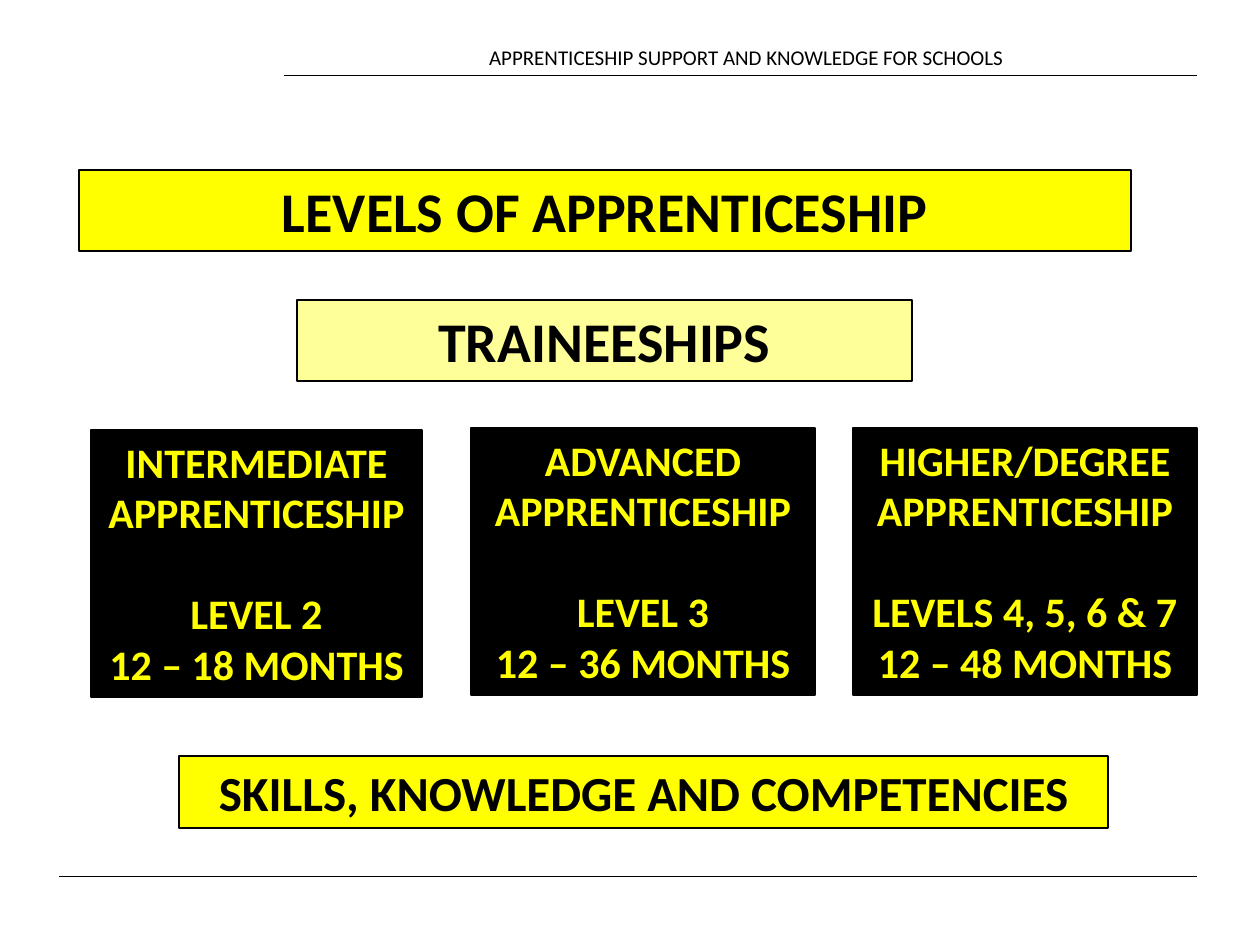
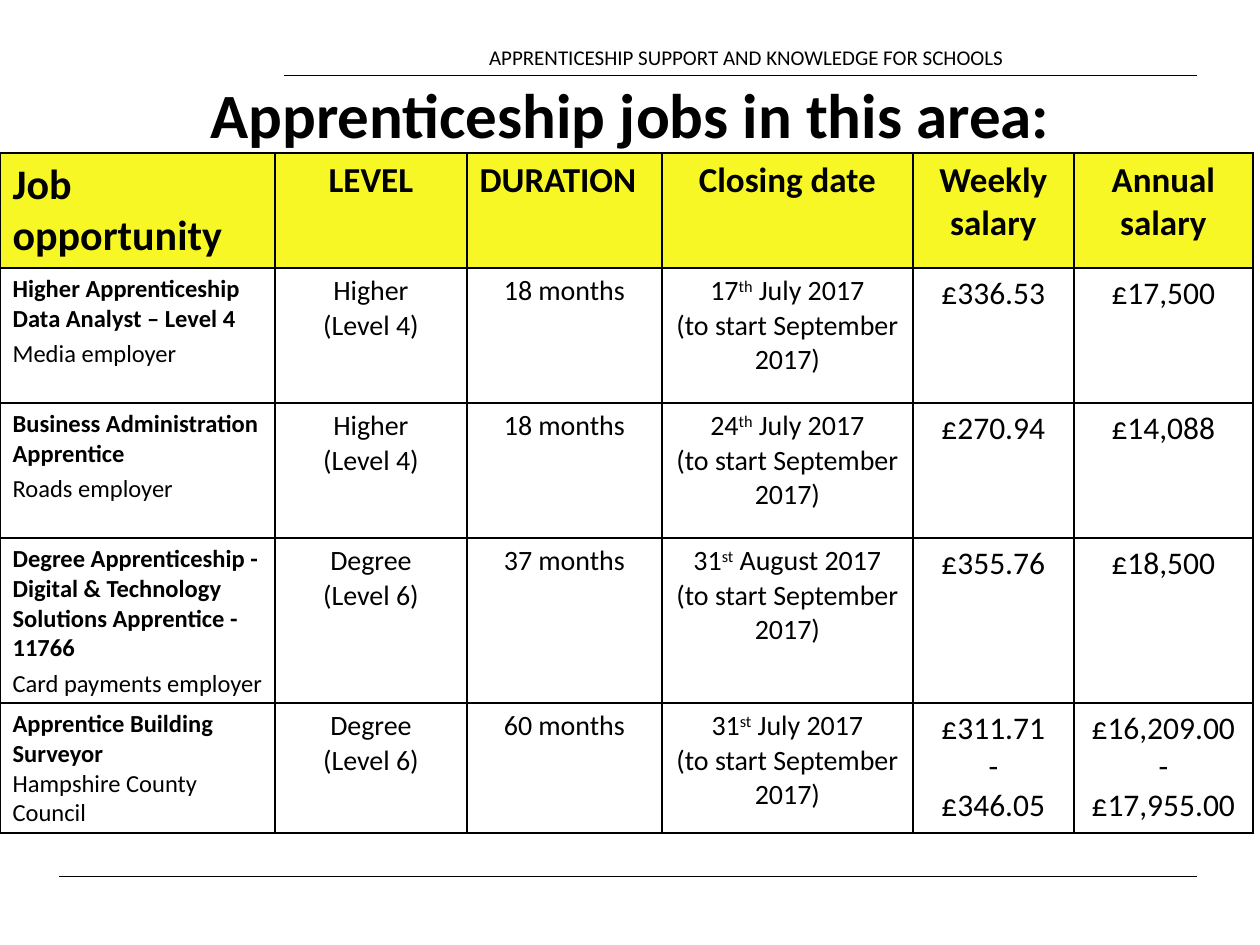
from dataclasses import dataclass

from lxml.etree import SubElement
from pptx import Presentation
from pptx.dml.color import RGBColor
from pptx.enum.shapes import MSO_CONNECTOR, MSO_SHAPE
from pptx.enum.text import MSO_ANCHOR, MSO_AUTO_SIZE, PP_ALIGN
from pptx.oxml.ns import qn
from pptx.util import Emu, Pt

EMU_PER_PX = 914400 / 126


@dataclass(frozen=True)
class Theme:
    """Colours, font and type sizes of the deck."""
    font: str = "Calibri"
    ink: str = "000000"
    yellow: str = "FFFF00"
    pale: str = "FFFF99"
    table_head: str = "F8F726"
    running: int = 12
    title: int = 36
    banner: int = 32
    summary: int = 28
    level: int = 24
    level_gap: int = 29
    first_head: int = 24
    head: int = 20
    salary: int = 18
    detail: int = 16
    job: int = 14
    job_gap: int = 3
    rule: float = 0.5
    outline: float = 0.75
    grid: int = 1


THEME = Theme()


@dataclass
class Para:
    """One paragraph; runs are strings, or (string, True) when raised."""
    runs: list
    size: int
    bold: bool = False
    color: str = THEME.ink
    align: PP_ALIGN = PP_ALIGN.CENTER
    before: int = 0


@dataclass(frozen=True)
class Job:
    """One vacancy in the jobs table."""
    role: str
    employer: str
    level: tuple
    duration: str
    day: str
    suffix: str
    month: str
    weekly: tuple
    annual: str
    employer_gap: int = THEME.job_gap


HEADINGS = ["Job opportunity", "LEVEL", "DURATION", "Closing date", "Weekly salary", "Annual salary"]
LEFT_HEADINGS = {"Job opportunity", "DURATION"}
COLUMN_WIDTHS = [275, 192, 195, 251, 161, 179]
ROW_HEIGHTS = [115, 135, 135, 165, 130]
LEVEL_4 = ("Higher", "(Level 4)")
LEVEL_6 = ("Degree", "(Level 6)")
JOBS = [
    Job("Higher Apprenticeship Data Analyst – Level 4", "Media employer", LEVEL_4,
        "18 months", "17", "th", "July", ("£336.53",), "£17,500"),
    Job("Business Administration Apprentice", "Roads employer", LEVEL_4,
        "18 months", "24", "th", "July", ("£270.94",), "£14,088"),
    Job("Degree Apprenticeship - Digital & Technology Solutions Apprentice - 11766",
        "Card payments employer", LEVEL_6,
        "37 months", "31", "st", "August", ("£355.76",), "£18,500"),
    Job("Apprentice Building Surveyor", "Hampshire County Council", LEVEL_6,
        "60 months", "31", "st", "July", ("£311.71", "-", "£346.05"),
        "£16,209.00 - £17,955.00", employer_gap=0),
]


def px(length):
    """Turn px into EMU."""
    return Emu(round(length * EMU_PER_PX))


def rgb(color):
    """Turn a hex string into a colour."""
    return RGBColor.from_string(color)


def write(frame, paras):
    """Fill a text frame with paragraphs, run by run."""
    frame.word_wrap = True
    for index, para in enumerate(paras):
        line = frame.paragraphs[0] if index == 0 else frame.add_paragraph()
        line.alignment = para.align
        if para.before:
            line.space_before = Pt(para.before)
        for part in para.runs:
            words, raised = (part, False) if isinstance(part, str) else part
            run = line.add_run()
            run.text = words
            run.font.name = THEME.font
            run.font.size = Pt(para.size)
            run.font.bold = para.bold
            run.font.color.rgb = rgb(para.color)
            if raised:
                run.font._element.set("baseline", "30000")


def place_title(slide, box, para, anchor):
    """Move the title placeholder to its box and fill it."""
    title = slide.shapes.title
    title.left, title.top, title.width, title.height = map(px, box)
    title.text_frame.auto_size = MSO_AUTO_SIZE.NONE
    title.text_frame.vertical_anchor = anchor
    write(title.text_frame, [para])
    return title


def paint(panel, fill):
    """Give a panel its fill and thin outline."""
    panel.fill.solid()
    panel.fill.fore_color.rgb = rgb(fill)
    panel.line.color.rgb = rgb(THEME.ink)
    panel.line.width = Pt(THEME.outline)


def add_panel(slide, box, fill, paras):
    """Add an outlined rectangle with text from its top."""
    panel = slide.shapes.add_shape(MSO_SHAPE.RECTANGLE, *map(px, box))
    panel.shadow.inherit = False
    paint(panel, fill)
    panel.text_frame.vertical_anchor = MSO_ANCHOR.TOP
    write(panel.text_frame, paras)


def add_rule(slide, left, right, y):
    """Add a thin horizontal rule."""
    rule = slide.shapes.add_connector(MSO_CONNECTOR.STRAIGHT, px(left), px(y), px(right), px(y))
    rule.line.color.rgb = rgb(THEME.ink)
    rule.line.width = Pt(THEME.rule)
    SubElement(rule._element.spPr, qn("a:effectLst"))


def add_frame(slide):
    """Add the running header and both rules."""
    add_rule(slide, 59, 1197, 876)
    add_rule(slide, 284, 1197, 75)
    header = slide.shapes.add_textbox(px(465), px(38), px(551), px(38))
    write(header.text_frame, [Para(["APPRENTICESHIP SUPPORT AND KNOWLEDGE FOR SCHOOLS"],
                                   THEME.running, align=PP_ALIGN.RIGHT)])


def add_level(slide, box, stage, level, months):
    """Add one apprenticeship level card."""
    rows = [(f"{stage} APPRENTICESHIP", 0), (level, THEME.level_gap), (months, 0)]
    add_panel(slide, box, THEME.ink,
              [Para([words], THEME.level, True, THEME.yellow, before=gap) for words, gap in rows])


def build_levels(slide):
    """Build the slide on apprenticeship levels."""
    add_frame(slide)
    heading = place_title(slide, (79, 170, 1052, 81),
                          Para(["LEVELS OF APPRENTICESHIP"], THEME.banner, True), MSO_ANCHOR.TOP)
    paint(heading, THEME.yellow)
    add_panel(slide, (297, 300, 615, 81), THEME.pale,
              [Para(["TRAINEESHIPS"], THEME.banner, True)])
    add_level(slide, (91, 430, 331, 267), "INTERMEDIATE", "LEVEL 2", "12 – 18 MONTHS")
    add_level(slide, (471, 428, 344, 267), "ADVANCED", "LEVEL 3", "12 – 36 MONTHS")
    add_level(slide, (853, 428, 344, 267), "HIGHER/DEGREE", "LEVELS 4, 5, 6 & 7", "12 – 48 MONTHS")
    add_panel(slide, (179, 756, 929, 72), THEME.yellow,
              [Para(["SKILLS, KNOWLEDGE AND COMPETENCIES"], THEME.summary, True)])


def outline_cell(cell):
    """Draw the four borders of a table cell."""
    properties = cell._tc.get_or_add_tcPr()
    for position, side in enumerate(("a:lnL", "a:lnR", "a:lnT", "a:lnB")):
        border = SubElement(properties, qn(side), w=str(Pt(THEME.grid)))
        fill = SubElement(border, qn("a:solidFill"))
        SubElement(fill, qn("a:srgbClr"), val=THEME.ink)
        properties.insert(position, border)


def heading_cells():
    """Return the paragraphs of the heading row."""
    return [[Para([words], THEME.head if column else THEME.first_head, True,
                  align=PP_ALIGN.LEFT if words in LEFT_HEADINGS else PP_ALIGN.CENTER)]
            for column, words in enumerate(HEADINGS)]


def job_cells(job):
    """Return the paragraphs of one job row."""
    return [
        [Para([job.role], THEME.job, True, align=PP_ALIGN.LEFT),
         Para([job.employer], THEME.job, align=PP_ALIGN.LEFT, before=job.employer_gap)],
        [Para([words], THEME.detail) for words in job.level],
        [Para([job.duration], THEME.detail)],
        [Para([job.day, (job.suffix, True), f" {job.month} 2017"], THEME.detail),
         Para(["(to start September 2017)"], THEME.detail)],
        [Para([words], THEME.salary) for words in job.weekly],
        [Para([job.annual], THEME.salary)],
    ]


def add_jobs_table(slide, left, top):
    """Add the jobs table with its top left corner at the given place."""
    rows = [heading_cells(), *map(job_cells, JOBS)]
    table = slide.shapes.add_table(len(rows), len(HEADINGS), px(left), px(top),
                                   px(sum(COLUMN_WIDTHS)), px(sum(ROW_HEIGHTS))).table
    table.first_row = table.horz_banding = False
    for column, width in zip(table.columns, COLUMN_WIDTHS):
        column.width = px(width)
    for index, (row, height, contents) in enumerate(zip(table.rows, ROW_HEIGHTS, rows)):
        row.height = px(height)
        for cell, paras in zip(row.cells, contents):
            if index == 0:
                cell.fill.solid()
                cell.fill.fore_color.rgb = rgb(THEME.table_head)
            else:
                cell.fill.background()
            outline_cell(cell)
            write(cell.text_frame, paras)


def build_jobs(slide):
    """Build the slide on local jobs."""
    add_frame(slide)
    add_jobs_table(slide, 0, 153)
    place_title(slide, (198, 86, 985, 54),
                Para(["Apprenticeship jobs in this area:"], THEME.title, True,
                     align=PP_ALIGN.LEFT), MSO_ANCHOR.MIDDLE)


def main():
    """Build and save the deck."""
    deck = Presentation()
    deck.slide_width, deck.slide_height = px(1260), px(945)
    title_only = deck.slide_layouts.get_by_name("Title Only")
    for build in (build_levels, build_jobs):
        build(deck.slides.add_slide(title_only))
    deck.save("out.pptx")


if __name__ == "__main__":
    main()
